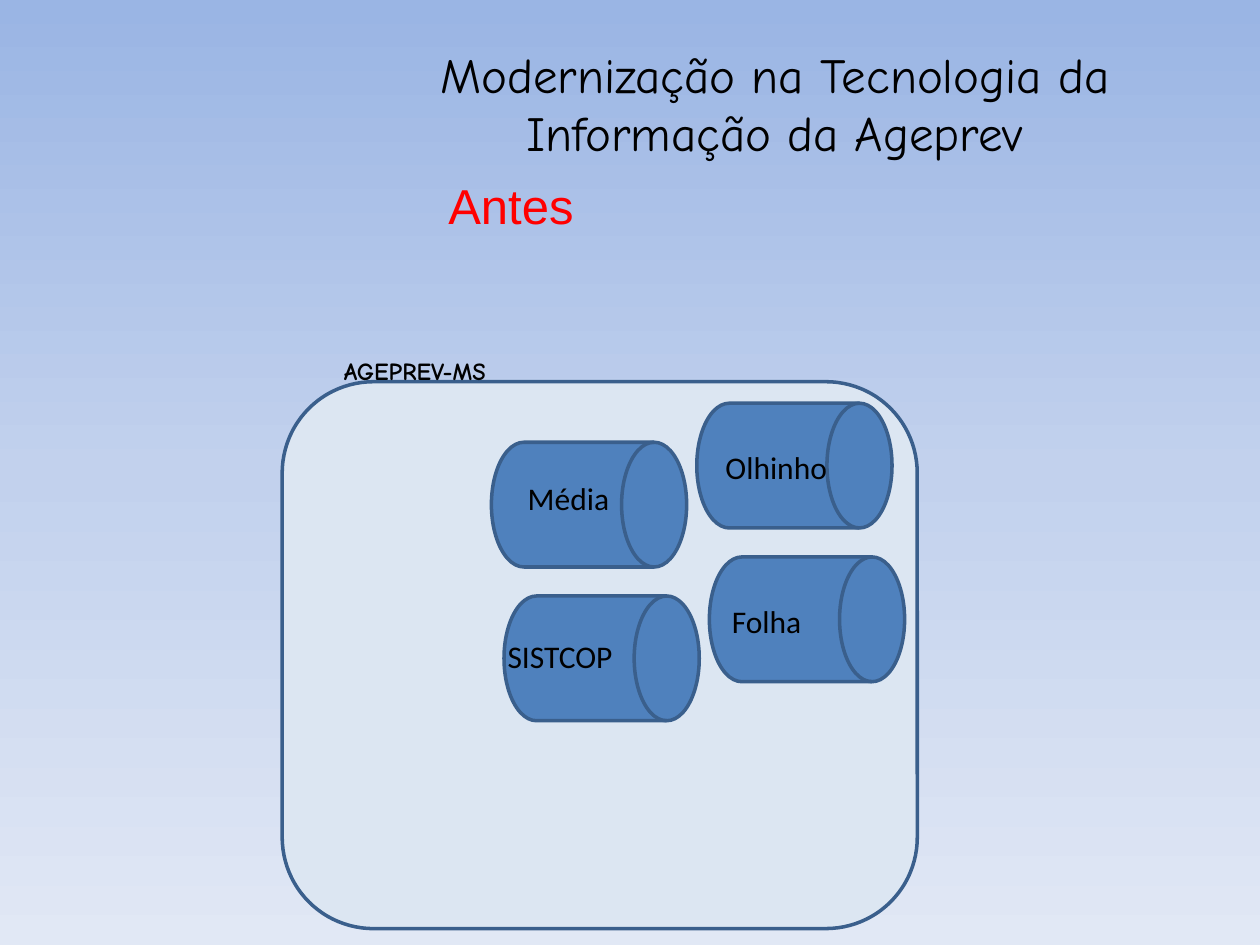
from copy import deepcopy

from pptx import Presentation
from pptx.dml.color import RGBColor
from pptx.enum.shapes import MSO_SHAPE as Shape
from pptx.enum.text import MSO_AUTO_SIZE as AutoSize, PP_ALIGN as Align
from pptx.oxml.ns import qn
from pptx.util import Inches, Pt

COLORS = {
    "sky_top": "9AB5E4", "sky_middle": "C2D1ED", "sky_bottom": "E1E8F5",
    "panel": "DCE6F2", "drum": "4F81BD", "outline": "3A5F8C",
    "text": "000000", "accent": "FF0000",
}
DRUM_SIZE = (1.55, 0.99)
DRUMS = [
    ("Folha", (3.39, 1.39), (0.08, 0.31), 0.94),
    ("SISTCOP", (1.76, 1.7), (-0.07, 0.28), 1.23),
    ("Olhinho", (3.29, 0.17), (0.13, 0.31), 1.23),
    ("Média", (1.66, 0.48), (0.19, 0.24), 1.23),
]


def color(name):
    """Return the named colour."""
    return RGBColor.from_string(COLORS[name])


def paint_background(page):
    """Fill the page with a vertical three-stop gradient."""
    fill = page.background.fill
    fill.gradient()
    fill.gradient_angle = 270
    stop_list = next(page.element.iter(qn("a:gsLst")))
    stop_list.insert(1, deepcopy(stop_list[0]))
    names = ("sky_top", "sky_middle", "sky_bottom")
    for stop, name, position in zip(fill.gradient_stops, names, (0, 0.5, 1)):
        stop.color.rgb = color(name)
        stop.position = position


def add_text(page, box, text, font, size, ink="text", bold=False, align=Align.LEFT, grow=True):
    """Place one wrapped paragraph in the given box."""
    frame = page.shapes.add_textbox(*map(Inches, box)).text_frame
    frame.word_wrap = True
    frame.auto_size = AutoSize.SHAPE_TO_FIT_TEXT if grow else AutoSize.NONE
    para = frame.paragraphs[0]
    para.text = text
    para.alignment = align
    para.font.name = font
    para.font.size = Pt(size)
    para.font.bold = bold
    para.font.color.rgb = color(ink)


def add_outlined(page, kind, box, fill):
    """Place a filled shape with the common outline."""
    shape = page.shapes.add_shape(kind, *map(Inches, box))
    shape.shadow.inherit = False
    shape.fill.solid()
    shape.fill.fore_color.rgb = color(fill)
    shape.line.color.rgb = color("outline")
    shape.line.width = Pt(2)


def add_heading(page, box):
    """Place the title and the red stage name below it."""
    left, top, width, height = box
    add_text(page, box, "Modernização na Tecnologia da Informação da Ageprev",
             "Comic Neue", 28, align=Align.CENTER, grow=False)
    add_text(page, (left + 0.66, top + 1.04, 4.22, 0.57), "Antes", "Arial", 28, "accent")


def add_agency(page, box):
    """Place the agency panel, its name and its system drums."""
    left, top, width, height = box
    add_outlined(page, Shape.ROUNDED_RECTANGLE, box, "panel")
    add_text(page, (left + 0.39, top - 0.25, 1.65, 0.34), "AGEPREV-MS", "Comic Neue", 14, bold=True)
    for name, (across, down), (indent, drop), label_width in DRUMS:
        drum_left, drum_top = left + across, top + down
        add_outlined(page, Shape.FLOWCHART_DIRECT_ACCESS_STORAGE,
                     (drum_left, drum_top, *DRUM_SIZE), "drum")
        add_text(page, (drum_left + indent, drum_top + drop, label_width, 0.4), name, "Calibri", 18)


def main():
    """Build and save the slide."""
    deck = Presentation()
    deck.slide_width, deck.slide_height = Inches(10), Inches(7.5)
    page = deck.slides.add_slide(deck.slide_layouts[6])
    paint_background(page)
    add_heading(page, (2.8, 0.3, 6.7, 1.25))
    add_agency(page, (2.24, 3.03, 5.04, 4.34))
    deck.save("out.pptx")


if __name__ == "__main__":
    main()
